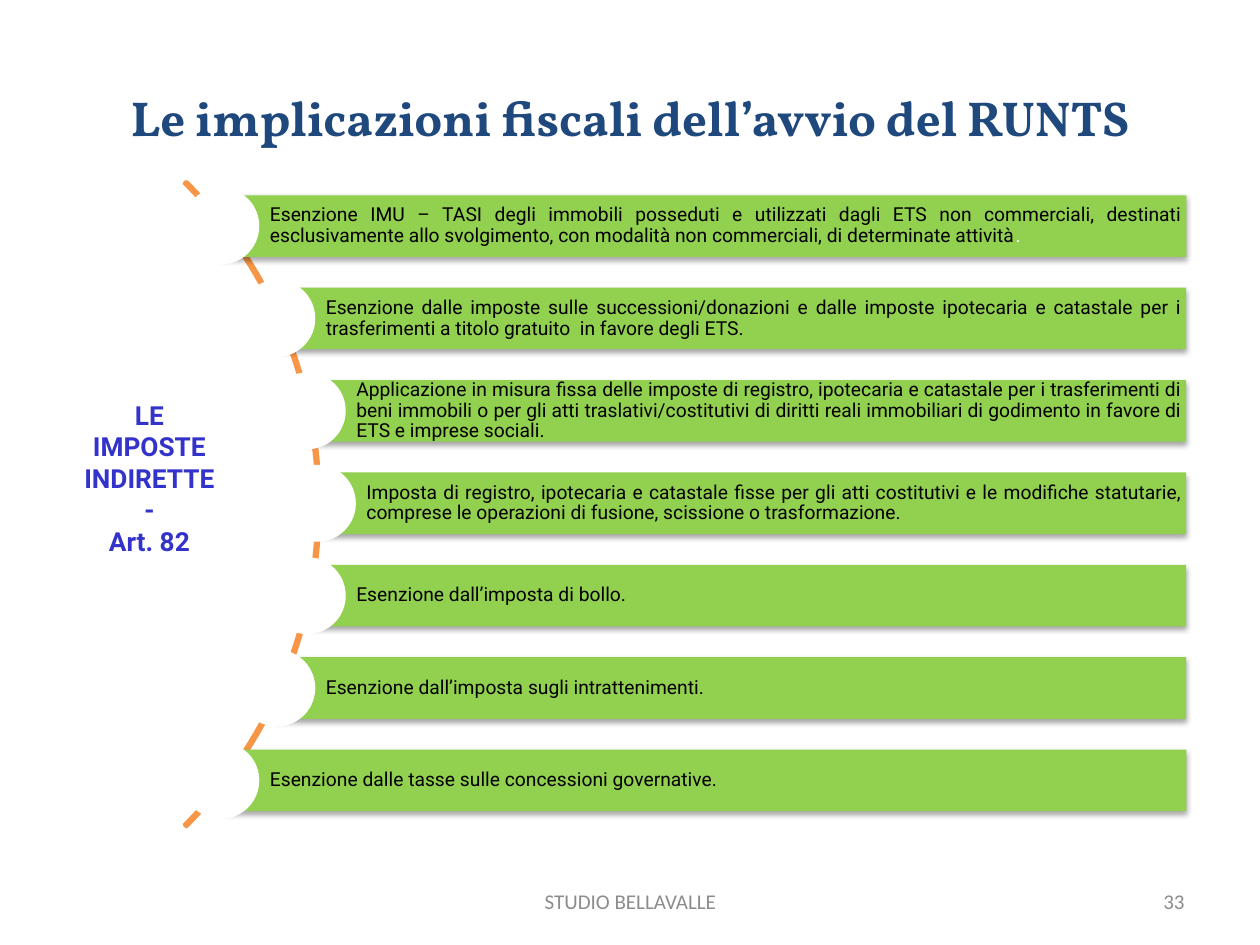
from lxml import etree
from pptx import Presentation
from pptx.dml.color import RGBColor
from pptx.enum.shapes import MSO_SHAPE
from pptx.enum.text import MSO_ANCHOR, PP_ALIGN
from pptx.oxml.ns import qn
from pptx.util import Pt

CENTER, RIGHT, JUSTIFY = PP_ALIGN.CENTER, PP_ALIGN.RIGHT, PP_ALIGN.JUSTIFY
TOP, MIDDLE = MSO_ANCHOR.TOP, MSO_ANCHOR.MIDDLE
BLOCK_ARC, RECTANGLE, OVAL = MSO_SHAPE.BLOCK_ARC, MSO_SHAPE.RECTANGLE, MSO_SHAPE.OVAL

TITLE = "Le implicazioni fiscali dell’avvio del RUNTS"
TOPIC = ["LE", "IMPOSTE", "INDIRETTE", "-", "Art. 82"]
# Each measure is a list of (text, colour) runs
MEASURES = [
    [("Esenzione IMU – TASI degli immobili posseduti e utilizzati dagli ETS non commerciali, "
      "destinati esclusivamente allo svolgimento, con modalità non commerciali, di determinate "
      "attività", "000000"), (".", "FFFFFF")],
    [("Esenzione dalle imposte sulle successioni/donazioni e dalle imposte ipotecaria e catastale "
      "per i trasferimenti a titolo gratuito  in favore degli ETS.", "000000")],
    [("Applicazione in misura fissa delle imposte di registro, ipotecaria e catastale per i "
      "trasferimenti di beni immobili o per gli atti traslativi/costitutivi di diritti reali "
      "immobiliari di godimento in favore di ETS e imprese sociali.", "000000")],
    [("Imposta di registro, ipotecaria e catastale fisse per gli atti costitutivi e le modifiche "
      "statutarie, comprese le operazioni di fusione, scissione o trasformazione.", "000000")],
    [("Esenzione dall’imposta di bollo.", "000000")],
    [("Esenzione dall’imposta sugli intrattenimenti.", "000000")],
    [("Esenzione dalle tasse sulle concessioni governative.", "000000")],
]
FOOTER = "STUDIO BELLAVALLE"
PAGE = "33"

BAR_LEFTS = [181.4, 175.6, 158.2, 126.2]  # by distance from the middle bar
BAR_RIGHT, BAR_TOP, BAR_STEP, BAR_HEIGHT = 677.9, 111.6, 52.8, 35.2
CIRCLE = 44
ARC_BOX = (-338.4, 27.4, 521.3, 521.3)
ARC_ADJUSTMENTS = (189, 27, 0.003)

TITLE_FONT = {"name": "Vollkorn", "size": Pt(28), "bold": True}
TOPIC_FONT = {"name": "Roboto", "size": Pt(15), "bold": True}
BAR_FONT = {"name": "Roboto", "size": Pt(11), "bold": False}
FOOTER_FONT = {"name": "Calibri", "size": Pt(12), "bold": False}
BAR_FRAME = {"margin_left": Pt(28), "margin_right": Pt(2.2), "margin_top": Pt(2.2),
             "margin_bottom": Pt(2.2)}


def rgb(code):
    return RGBColor.from_string(code)


def set_all(target, values):
    for key, value in values.items():
        setattr(target, key, value)


def write(frame, paragraphs, font, align, anchor=MIDDLE, spacing=None):
    """Fill a text frame with paragraphs, each a list of (text, colour) runs."""
    frame.word_wrap = True
    frame.vertical_anchor = anchor
    for i, runs in enumerate(paragraphs):
        paragraph = frame.paragraphs[0] if i == 0 else frame.add_paragraph()
        set_all(paragraph, {"alignment": align, "line_spacing": spacing})
        for text, color in runs:
            run = paragraph.add_run()
            run.text = text
            set_all(run.font, font)
            run.font.color.rgb = rgb(color)


def add_figure(slide, kind, box, fill=None, line=None):
    figure = slide.shapes.add_shape(kind, *map(Pt, box))
    figure.shadow.inherit = False
    if fill:
        figure.fill.solid()
        figure.fill.fore_color.rgb = rgb(fill)
    else:
        figure.fill.background()
    if line:
        figure.line.color.rgb = rgb(line)
        figure.line.width = Pt(2)
    else:
        figure.line.fill.background()
    return figure


def drop_shadow(figure):
    effects = figure._element.spPr.find(qn("a:effectLst"))
    shadow = etree.SubElement(effects, qn("a:outerShdw"), blurRad=str(Pt(3.1)),
                              dist=str(Pt(1.8)), dir="5400000", rotWithShape="0")
    color = etree.SubElement(shadow, qn("a:srgbClr"), val="000000")
    etree.SubElement(color, qn("a:alpha"), val="35000")


def add_measure(slide, index, runs):
    left = BAR_LEFTS[abs(index - len(MEASURES) // 2)]
    top = BAR_TOP + index * BAR_STEP
    bar = add_figure(slide, RECTANGLE, (left, top, BAR_RIGHT - left, BAR_HEIGHT), "92D050")
    drop_shadow(bar)
    set_all(bar.text_frame, BAR_FRAME)
    write(bar.text_frame, [runs], BAR_FONT, JUSTIFY, spacing=0.9)
    circle_top = top + (BAR_HEIGHT - CIRCLE) / 2
    add_figure(slide, OVAL, (left - CIRCLE / 2, circle_top, CIRCLE, CIRCLE), "FFFFFF")


def add_label(slide, box, lines, color, font, align, anchor=MIDDLE):
    label = slide.shapes.add_textbox(*map(Pt, box))
    write(label.text_frame, [[(line, color)] for line in lines], font, align, anchor)


def main():
    deck = Presentation()
    deck.slide_width, deck.slide_height = Pt(720), Pt(540)
    slide = deck.slides.add_slide(deck.slide_layouts[5])

    title = slide.shapes.title
    set_all(title, {"left": Pt(36), "top": Pt(21.6), "width": Pt(648), "height": Pt(90)})
    write(title.text_frame, [[(TITLE, "1F497D")]], TITLE_FONT, CENTER)

    arc = add_figure(slide, BLOCK_ARC, ARC_BOX, line="F79646")
    for i, value in enumerate(ARC_ADJUSTMENTS):
        arc.adjustments[i] = value
    for i, runs in enumerate(MEASURES):
        add_measure(slide, i, runs)

    add_label(slide, (31, 224.6, 108.7, 97.9), TOPIC, "3333CC", TOPIC_FONT, CENTER, TOP)
    add_label(slide, (246.2, 500.4, 228.2, 28.8), [FOOTER], "8C8C8C", FOOTER_FONT, CENTER)
    add_label(slide, (516.2, 500.4, 167.8, 28.8), [PAGE], "8C8C8C", FOOTER_FONT, RIGHT)
    deck.save("out.pptx")


if __name__ == "__main__":
    main()
